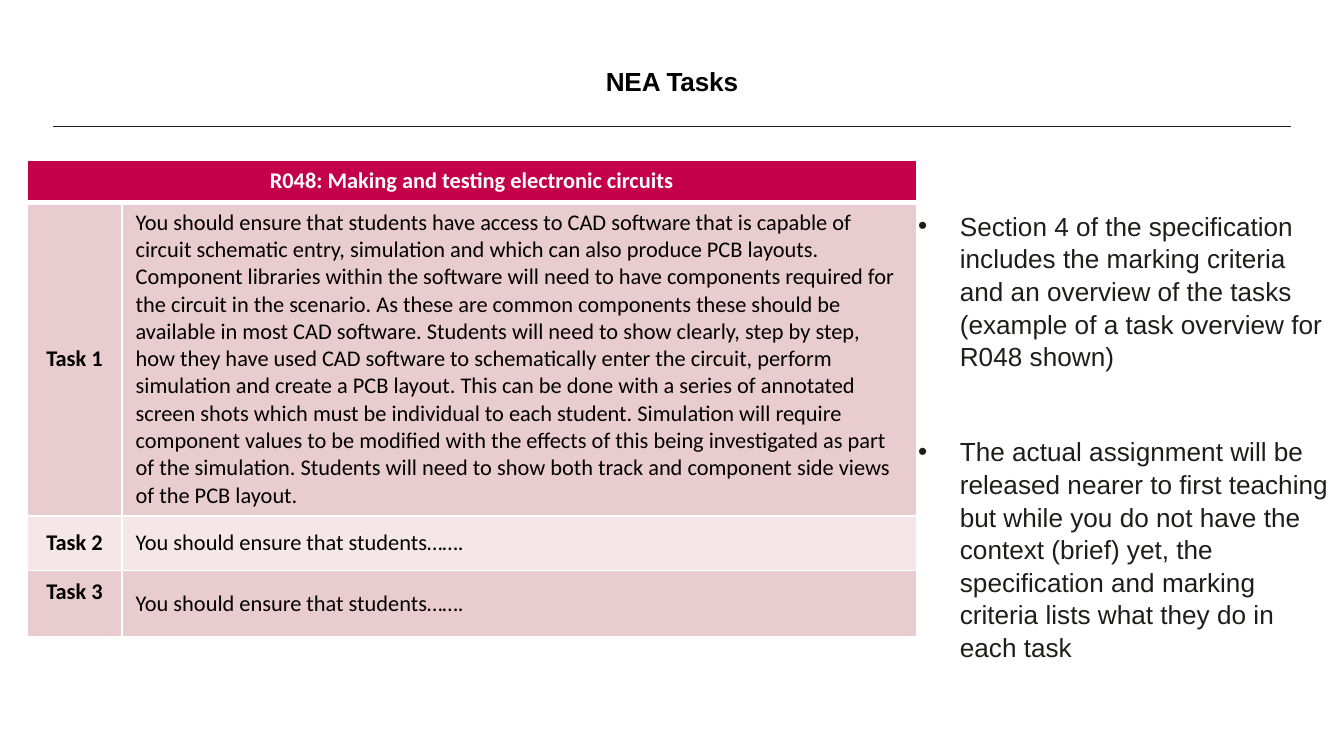
from lxml import etree
from pptx import Presentation
from pptx.dml.color import RGBColor as RGB
from pptx.enum.shapes import MSO_CONNECTOR as Link
from pptx.enum.text import MSO_ANCHOR as Anchor, MSO_AUTO_SIZE as Fit, PP_ALIGN as Align
from pptx.oxml.ns import qn
from pptx.util import Cm, Pt

HUES = {"ink": "1D1D1B", "black": "000000", "white": "FFFFFF",
        "head": "C30049", "dark": "E9CCD0", "pale": "F5E7E9"}


def write(para, text, font, size, hue, bold=False):
    run = para.add_run()
    run.text = text
    run.font.name = font
    run.font.size = Pt(size)
    run.font.bold = bold
    run.font.color.rgb = RGB.from_string(HUES[hue])
    return run


def edge(cell, side, width):
    line = etree.SubElement(cell._tc.get_or_add_tcPr(), qn("a:ln" + side), w=str(Pt(width)))
    fill = etree.SubElement(line, qn("a:solidFill"))
    etree.SubElement(fill, qn("a:srgbClr"), val=HUES["white"])


deck = Presentation()
deck.slide_width, deck.slide_height = Cm(25.4), Cm(14.29)
slide = deck.slides.add_slide(deck.slide_layouts[1])
title, body = slide.placeholders

places = [(title, 1.55, 1.23, 22.3, 0.76), (body, 17.3, 3.95, 7.82, 8.38)]
for box, left, top, width, height in places:
    box.left, box.top, box.width, box.height = Cm(left), Cm(top), Cm(width), Cm(height)
    frame = box.text_frame
    frame.margin_left = frame.margin_right = frame.margin_top = frame.margin_bottom = 0
    frame.word_wrap = True
    frame.auto_size = Fit.NONE
    frame.vertical_anchor = Anchor.TOP

para = title.text_frame.paragraphs[0]
para.alignment = Align.CENTER
run = write(para, "NEA Tasks", "Arial", 14, "black", True)
run.font._element.set("spc", "-10")

rule = slide.shapes.add_connector(Link.STRAIGHT, Cm(1), Cm(2.39), Cm(24.4), Cm(2.39))
rule.line.color.rgb = RGB.from_string(HUES["ink"])
rule.line.width = Pt(0.5)
etree.SubElement(rule._element.spPr, qn("a:effectLst"))

points = [
    "Section 4 of the specification includes the marking criteria and an overview of the tasks "
    "(example of a task overview for R048 shown)",
    "The actual assignment will be released nearer to first teaching but while you do not have "
    "the context (brief) yet, the specification and marking criteria lists what they do in each task",
]
frame = body.text_frame
for i, text in enumerate(points):
    para = frame.add_paragraph() if i else frame.paragraphs[0]
    props = para._p.get_or_add_pPr()
    props.set("marL", str(Cm(0.84)))
    props.set("indent", str(-Cm(0.79)))
    etree.SubElement(props, qn("a:buChar"), char="•")
    para.alignment = Align.LEFT
    para.line_spacing = 1.04
    para.space_before = Pt(33.6 * i)
    write(para, text, "Arial", 14, "ink")

short = "You should ensure that students……."
long = " ".join([
    "You should ensure that students have access to CAD software that is capable of circuit "
    "schematic entry, simulation and which can also produce PCB layouts.",
    "Component libraries within the software will need to have components required for the "
    "circuit in the scenario.",
    "As these are common components these should be available in most CAD software.",
    "Students will need to show clearly, step by step, how they have used CAD software to "
    "schematically enter the circuit, perform simulation and create a PCB layout.",
    "This can be done with a series of annotated screen shots which must be individual to "
    "each student.",
    "Simulation will require component values to be modified with the effects of this being "
    "investigated as part of the simulation.",
    "Students will need to show both track and component side views of the PCB layout.",
])
rows = [
    ("R048: Making and testing electronic circuits", "", "head", 0.79),
    ("Task 1", long, "dark", 5.84),
    ("Task 2", short, "pale", 1.03),
    ("Task 3", short, "dark", 1.25),
]
table = slide.shapes.add_table(len(rows), 2, Cm(0.51), Cm(3.03), Cm(16.81), Cm(8.91)).table
for col, width in zip(table.columns, (1.8, 15.01)):
    col.width = Cm(width)
table.cell(0, 0).merge(table.cell(0, 1))

for r, (name, text, hue, height) in enumerate(rows):
    table.rows[r].height = Cm(height)
    for c, words in enumerate((name, text)):
        cell = table.cell(r, c)
        for side in "LRTB":
            thick = (r, side) in ((0, "B"), (1, "T"))
            edge(cell, side, 3 if thick else 1)
        cell.fill.solid()
        cell.fill.fore_color.rgb = RGB.from_string(HUES[hue])
        cell.vertical_anchor = Anchor.MIDDLE
        if words:
            para = cell.text_frame.paragraphs[0]
            para.alignment = Align.LEFT if c else Align.CENTER
            write(para, words, "Calibri", 12, "black" if r else "white", c == 0)
table.cell(3, 0).margin_bottom = Cm(0.58)

deck.save("out.pptx")
